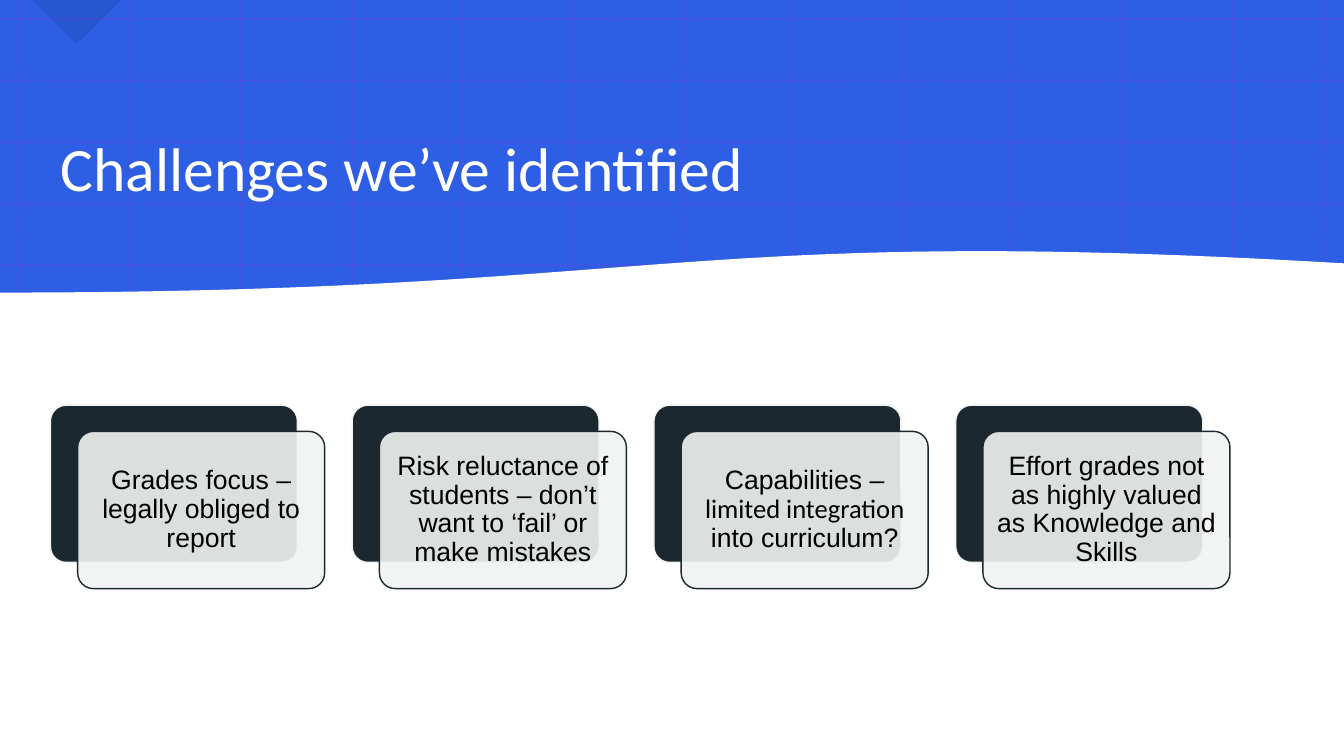
"""Build the "Challenges we've identified" slide: a wavy blue banner above four cards."""
import lxml.etree
import pptx
import pptx.dml.color
import pptx.enum.dml
import pptx.enum.shapes
import pptx.enum.text
import pptx.oxml.ns
import pptx.util

Inches = pptx.util.Inches
Pt = pptx.util.Pt
RGBColor = pptx.dml.color.RGBColor
SHAPE = pptx.enum.shapes.MSO_SHAPE

BLUE = RGBColor(0x2D, 0x5E, 0xE3)
NAVY = RGBColor(0x10, 0x2C, 0x78)
MAGENTA = RGBColor(0xCD, 0x1B, 0xD1)
WHITE = RGBColor(0xFF, 0xFF, 0xFF)
BLACK = RGBColor(0x00, 0x00, 0x00)
DARK = RGBColor(0x1B, 0x28, 0x30)
PALE = RGBColor(0xF0, 0xF3, 0xF1)

WIDTH, HEIGHT = 13.33, 7.5
GRID_LEFT, COLUMN_WIDTH, COLUMNS = 0.21, 1.093, 12
GRID_TOP, ROW_HEIGHT, ROWS = 0.19, 0.61, 5
LAST_COLUMN = 13.12
WAVE_STEPS = 60
CARD_LEFT, CARD_TOP, CARD_PITCH = 0.5, 4.02, 2.993
CARD_WIDTH, CARD_HEIGHT = 2.45, 1.56
SHIFT_RIGHT, SHIFT_DOWN = 0.27, 0.26

CARDS = [
    [("Grades focus – legally obliged to report", "Arial")],
    [("Risk reluctance of students – don’t want to ‘fail’ or make mistakes", "Arial")],
    [("Capabilities – ", "Arial"), ("limited integration", "Calibri"), (" into curriculum?", "Arial")],
    [("Effort grades not as highly valued as Knowledge and Skills", "Arial")],
]


def set_opacity(shape, percent):
    color = next(shape.element.iter(pptx.oxml.ns.qn("a:srgbClr")))
    alpha = lxml.etree.SubElement(color, pptx.oxml.ns.qn("a:alpha"))
    alpha.set("val", str(percent * 1000))


def add_filled(kind, left, top, width, height, fill, line=None):
    shape = slide.shapes.add_shape(kind, Inches(left), Inches(top), Inches(width), Inches(height))
    shape.shadow.inherit = False
    shape.fill.solid()
    shape.fill.fore_color.rgb = fill
    if line is None:
        shape.line.fill.background()
    else:
        shape.line.color.rgb = line
        shape.line.width = Pt(1)
    return shape


presentation = pptx.Presentation()
presentation.slide_width = Inches(WIDTH)
presentation.slide_height = Inches(HEIGHT)
slide = presentation.slides.add_slide(presentation.slide_layouts[5])

add_filled(SHAPE.RECTANGLE, 0, 0, WIDTH, HEIGHT, BLUE)

column_lefts = [GRID_LEFT + column * COLUMN_WIDTH for column in range(COLUMNS)] + [LAST_COLUMN]
row_tops = [GRID_TOP + row * ROW_HEIGHT for row in range(ROWS)]
grid_lines = [(left, 0, left, HEIGHT) for left in column_lefts]
grid_lines += [(0, top, WIDTH, top) for top in row_tops]
for ends in grid_lines:
    grid_line = slide.shapes.add_connector(
        pptx.enum.shapes.MSO_CONNECTOR.STRAIGHT, *[Inches(end) for end in ends])
    grid_line.line.color.rgb = MAGENTA
    grid_line.line.width = Pt(1.5)
    grid_line.line.dash_style = pptx.enum.dml.MSO_LINE.ROUND_DOT
    set_opacity(grid_line, 20)
    lxml.etree.SubElement(grid_line.element.spPr, pptx.oxml.ns.qn("a:effectLst"))

corner = add_filled(SHAPE.RIGHT_TRIANGLE, 0.45, -0.31, 0.62, 0.62, NAVY)
corner.rotation = 315
set_opacity(corner, 17)

wave_controls = [(0, 2.91), (6.65, 2.91), (6.69, 2.23), (WIDTH, 2.62)]
wave_points = []
for step in range(WAVE_STEPS + 1):
    t = step / WAVE_STEPS
    weights = [(1 - t) ** 3, 3 * t * (1 - t) ** 2, 3 * t ** 2 * (1 - t), t ** 3]
    wave_points.append([
        Inches(sum(weight * control[axis] for weight, control in zip(weights, wave_controls)))
        for axis in (0, 1)])
builder = slide.shapes.build_freeform(0, Inches(HEIGHT))
builder.add_line_segments(wave_points + [(Inches(WIDTH), Inches(HEIGHT))], close=True)
wave = builder.convert_to_shape()
wave.shadow.inherit = False
wave.fill.solid()
wave.fill.fore_color.rgb = WHITE
wave.line.color.rgb = WHITE
wave.line.width = Pt(1)

title = slide.shapes.title
title.element.getparent().append(title.element)
title.left, title.top = Inches(0.5), Inches(0.79)
title.width, title.height = Inches(11.75), Inches(1.83)
title.text_frame.text = "Challenges we’ve identified"
title.text_frame.auto_size = pptx.enum.text.MSO_AUTO_SIZE.NONE
title.text_frame.vertical_anchor = pptx.enum.text.MSO_ANCHOR.MIDDLE
heading = title.text_frame.paragraphs[0]
heading.alignment = pptx.enum.text.PP_ALIGN.LEFT
heading.line_spacing = 0.9
heading.font.name = "Calibri"
heading.font.size = Pt(44)
heading.font.color.rgb = WHITE

for index, runs in enumerate(CARDS):
    left = CARD_LEFT + index * CARD_PITCH
    back = add_filled(SHAPE.ROUNDED_RECTANGLE, left, CARD_TOP, CARD_WIDTH, CARD_HEIGHT, DARK, PALE)
    front = add_filled(SHAPE.ROUNDED_RECTANGLE, left + SHIFT_RIGHT, CARD_TOP + SHIFT_DOWN,
                       CARD_WIDTH, CARD_HEIGHT, PALE, DARK)
    back.adjustments[0] = front.adjustments[0] = 0.1
    set_opacity(front, 90)

    frame = front.text_frame
    frame.word_wrap = True
    frame.vertical_anchor = pptx.enum.text.MSO_ANCHOR.MIDDLE
    frame.margin_left = frame.margin_right = Inches(0.08)
    frame.margin_top = frame.margin_bottom = Inches(0.08)
    paragraph = frame.paragraphs[0]
    paragraph.alignment = pptx.enum.text.PP_ALIGN.CENTER
    paragraph.line_spacing = 0.9
    paragraph.font.size = Pt(19)
    paragraph.font.color.rgb = BLACK
    for text, font_name in runs:
        run = paragraph.add_run()
        run.text = text
        run.font.name = font_name

presentation.save("out.pptx")
